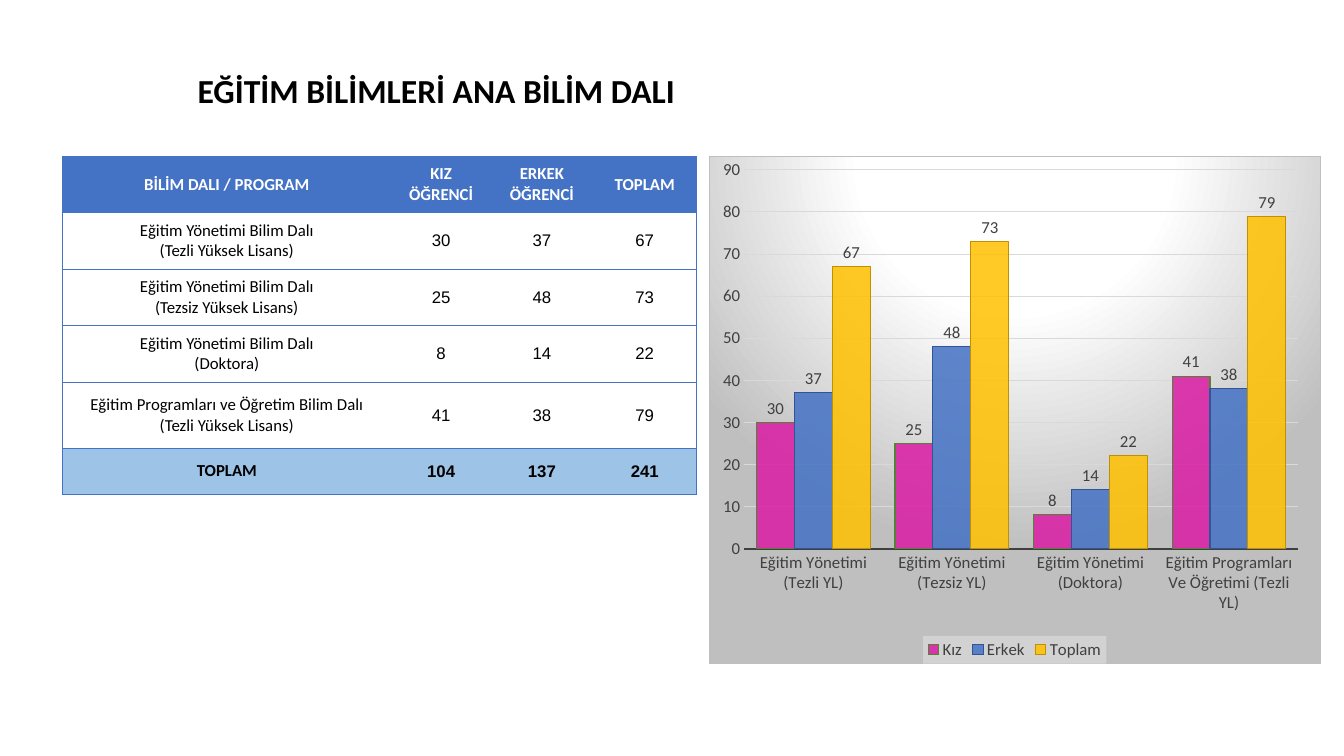
from lxml import etree
from pptx import Presentation
from pptx.chart.data import CategoryChartData
from pptx.dml.color import RGBColor
from pptx.enum.chart import (XL_CHART_TYPE as ChartType, XL_LABEL_POSITION as LabelPos,
                             XL_LEGEND_POSITION as LegendPos, XL_TICK_MARK as TickMark)
from pptx.enum.text import MSO_ANCHOR as Anchor, MSO_AUTO_SIZE as AutoSize, PP_ALIGN as Align
from pptx.oxml import parse_xml
from pptx.oxml.ns import nsdecls, qn
from pptx.util import Inches, Pt

FONT, NUMBER_FONT = "Calibri", "Vollkorn"
BLUE, TOTAL_BLUE, GREY, BLACK, WHITE = "4472C4", "9DC3E6", "404040", "000000", "FFFFFF"
NO_STYLE = "{2D5ABB26-0587-4C30-8999-92F81FD0307C}"

TITLE = "EĞİTİM BİLİMLERİ ANA BİLİM DALI"
HEADER = ["BİLİM DALI / PROGRAM", "KIZ ÖĞRENCİ", "ERKEK ÖĞRENCİ", "TOPLAM"]
MANAGEMENT = "Eğitim Yönetimi Bilim Dalı"
# Programme, level, chart label, girls, boys, total
PROGRAMMES = [
    (MANAGEMENT, "(Tezli Yüksek Lisans)", "Eğitim Yönetimi (Tezli YL)", 30, 37, 67),
    (MANAGEMENT, "(Tezsiz Yüksek Lisans)", "Eğitim Yönetimi (Tezsiz YL)", 25, 48, 73),
    (MANAGEMENT, "(Doktora)", "Eğitim Yönetimi (Doktora)", 8, 14, 22),
    ("Eğitim Programları ve Öğretim Bilim Dalı", "(Tezli Yüksek Lisans)",
     "Eğitim Programları Ve Öğretimi (Tezli YL)", 41, 38, 79),
]
# Name, fill, outline
GROUPS = [("Kız", "D91BA3", "548235"), ("Erkek", BLUE, "2F5597"), ("Toplam", "FFC000", "BF9000")]
COLUMN_WIDTHS = [3.26, 0.99, 1.01, 1.03]
ROW_HEIGHTS = [0.56, 0.56, 0.56, 0.56, 0.66, 0.45]
VOLLKORN_CELLS = {(1, 2), (4, 3)}
CONTENT_TOP = 1.55


def rgb(value):
    return RGBColor.from_string(value)


def style_font(font, size, color, bold=False, name=FONT):
    font.name, font.size, font.bold = name, Pt(size), bold
    font.color.rgb = rgb(color)


def set_line(line, color, width):
    line.color.rgb = rgb(color)
    line.width = Pt(width)


def add_title(slide):
    title = slide.shapes.title
    title.left, title.top, title.width, title.height = map(Inches, (1.86, 0.64, 7.4, 0.91))
    frame = title.text_frame
    frame.word_wrap, frame.auto_size = True, AutoSize.NONE
    frame.vertical_anchor = Anchor.TOP
    paragraph = frame.paragraphs[0]
    paragraph.alignment = Align.LEFT
    run = paragraph.add_run()
    run.text = TITLE
    style_font(run.font, 24, BLACK, True)


def set_borders(cell, sides):
    """Draw the named sides and leave the others without a line."""
    properties = cell._tc.get_or_add_tcPr()
    for position, side in enumerate("LRTB"):
        paint = (f'<a:solidFill><a:srgbClr val="{BLUE}"/></a:solidFill>'
                 if side in sides else "<a:noFill/>")
        properties.insert(position, parse_xml(
            f'<a:ln{side} {nsdecls("a")} w="{Pt(0.5)}">{paint}</a:ln{side}>'))


def fill_cell(cell, lines, color, bold, background, sides, font_name=FONT):
    cell.margin_left = cell.margin_right = Inches(0.15)
    cell.margin_top = cell.margin_bottom = Inches(0.05)
    cell.vertical_anchor = Anchor.MIDDLE
    if background:
        cell.fill.solid()
        cell.fill.fore_color.rgb = rgb(background)
    else:
        cell.fill.background()
    set_borders(cell, sides)
    frame = cell.text_frame
    for index, line in enumerate(lines):
        paragraph = frame.paragraphs[0] if index == 0 else frame.add_paragraph()
        paragraph.alignment = Align.CENTER
        run = paragraph.add_run()
        run.text = line
        style_font(run.font, 12, color, bold, font_name)
        # Digits run right to left and take the complex-script font
        if line.isdigit():
            paragraph._p.get_or_add_pPr().set("rtl", "1")
            etree.SubElement(run._r.get_or_add_rPr(), qn("a:cs")).set("typeface", "Arial")


def add_student_table(slide):
    totals = [sum(column) for column in zip(*(row[3:] for row in PROGRAMMES))]
    rows = [[[label] for label in HEADER]]
    rows += [[[name, level]] + [[str(n)] for n in counts]
             for name, level, _, *counts in PROGRAMMES]
    rows.append([["TOPLAM"]] + [[str(n)] for n in totals])

    table = slide.shapes.add_table(
        len(rows), len(HEADER), Inches(0.62), Inches(CONTENT_TOP),
        Inches(sum(COLUMN_WIDTHS)), Inches(sum(ROW_HEIGHTS))).table
    table._tbl.tblPr.find(qn("a:tableStyleId")).text = NO_STYLE
    table.horz_banding = False
    for column, width in zip(table.columns, COLUMN_WIDTHS):
        column.width = Inches(width)
    last_row, last_column = len(rows) - 1, len(HEADER) - 1
    for r, row in enumerate(rows):
        table.rows[r].height = Inches(ROW_HEIGHTS[r])
        background = {0: BLUE, last_row: TOTAL_BLUE}.get(r)
        for c, lines in enumerate(row):
            sides = "TB" + {0: "L", last_column: "R"}.get(c, "")
            fill_cell(table.cell(r, c), lines, BLACK if r else WHITE, r in (0, last_row),
                      background, sides, NUMBER_FONT if (r, c) in VOLLKORN_CELLS else FONT)


def set_chart_background(chart):
    stops = "".join(f'<a:gs pos="{share * 1000}"><a:srgbClr val="{color}"/></a:gs>'
                    for share, color in [(0, WHITE), (39, WHITE), (100, "BFBFBF")])
    chart._chartSpace.find(qn("c:chart")).addnext(parse_xml(
        f'<c:spPr {nsdecls("c", "a")}><a:gradFill>'
        f'<a:gsLst>{stops}</a:gsLst><a:path path="circle">'
        '<a:fillToRect l="50000" t="-80000" r="50000" b="180000"/></a:path></a:gradFill>'
        f'<a:ln w="{Pt(0.75)}"><a:solidFill><a:srgbClr val="BFBFBF"/></a:solidFill></a:ln>'
        '</c:spPr>'))


def set_plot_layout(chart, x, y, w, h):
    plot_area = chart._chartSpace.find(qn("c:chart")).find(qn("c:plotArea"))
    for layout in plot_area.findall(qn("c:layout")):
        plot_area.remove(layout)
    modes = '<c:layoutTarget val="inner"/><c:xMode val="edge"/><c:yMode val="edge"/>'
    sizes = "".join(f'<c:{key} val="{value}"/>' for key, value in zip("xywh", (x, y, w, h)))
    plot_area.insert(0, parse_xml(
        f'<c:layout {nsdecls("c")}><c:manualLayout>{modes}{sizes}</c:manualLayout></c:layout>'))


def style_axes(chart):
    for axis in (chart.category_axis, chart.value_axis):
        axis.major_tick_mark = axis.minor_tick_mark = TickMark.NONE
        style_font(axis.tick_labels.font, 12, GREY)
    set_line(chart.category_axis.format.line, GREY, 1.5)
    values = chart.value_axis
    values.minimum_scale, values.maximum_scale, values.major_unit = 0, 90, 10
    values.format.line.fill.background()
    set_line(values.major_gridlines.format.line, "D9D9D9", 0.75)


def add_legend(chart):
    chart.has_legend = True
    legend = chart.legend
    legend.position, legend.include_in_layout = LegendPos.BOTTOM, False
    style_font(legend.font, 12, GREY)
    legend._element.find(qn("c:overlay")).addnext(parse_xml(
        f'<c:spPr {nsdecls("c", "a")}><a:solidFill><a:srgbClr val="F2F2F2">'
        '<a:alpha val="39000"/></a:srgbClr></a:solidFill></c:spPr>'))


def add_student_chart(slide):
    data = CategoryChartData()
    data.categories = [row[2] for row in PROGRAMMES]
    for index, (name, _, _) in enumerate(GROUPS):
        data.add_series(name, [row[3 + index] for row in PROGRAMMES])
    chart = slide.shapes.add_chart(
        ChartType.COLUMN_CLUSTERED, Inches(7.03), Inches(CONTENT_TOP),
        Inches(6.07), Inches(5.04), data).chart
    chart.has_title = False
    style_font(chart.font, 10, BLACK)
    set_chart_background(chart)
    set_plot_layout(chart, 0.057, 0.026, 0.907, 0.747)
    style_axes(chart)
    add_legend(chart)

    # Columns and their value labels
    plot = chart.plots[0]
    plot.gap_width, plot.overlap, plot.vary_by_categories = 65, 0, False
    for series, (_, color, outline) in zip(plot.series, GROUPS):
        fill = series.format.fill
        fill.solid()
        fill.fore_color.rgb = rgb(color)
        paint = series._element.find(qn("c:spPr")).find(qn("a:solidFill"))[0]
        etree.SubElement(paint, qn("a:alpha")).set("val", "85000")
        set_line(series.format.line, outline, 0.75)
        labels = series.data_labels
        labels.show_value, labels.position = True, LabelPos.OUTSIDE_END
        style_font(labels.font, 12, GREY)


def main():
    deck = Presentation()
    deck.slide_width, deck.slide_height = Inches(13.33), Inches(7.5)
    slide = deck.slides.add_slide(deck.slide_layouts[5])
    add_title(slide)
    add_student_table(slide)
    add_student_chart(slide)
    deck.save("out.pptx")


if __name__ == "__main__":
    main()
